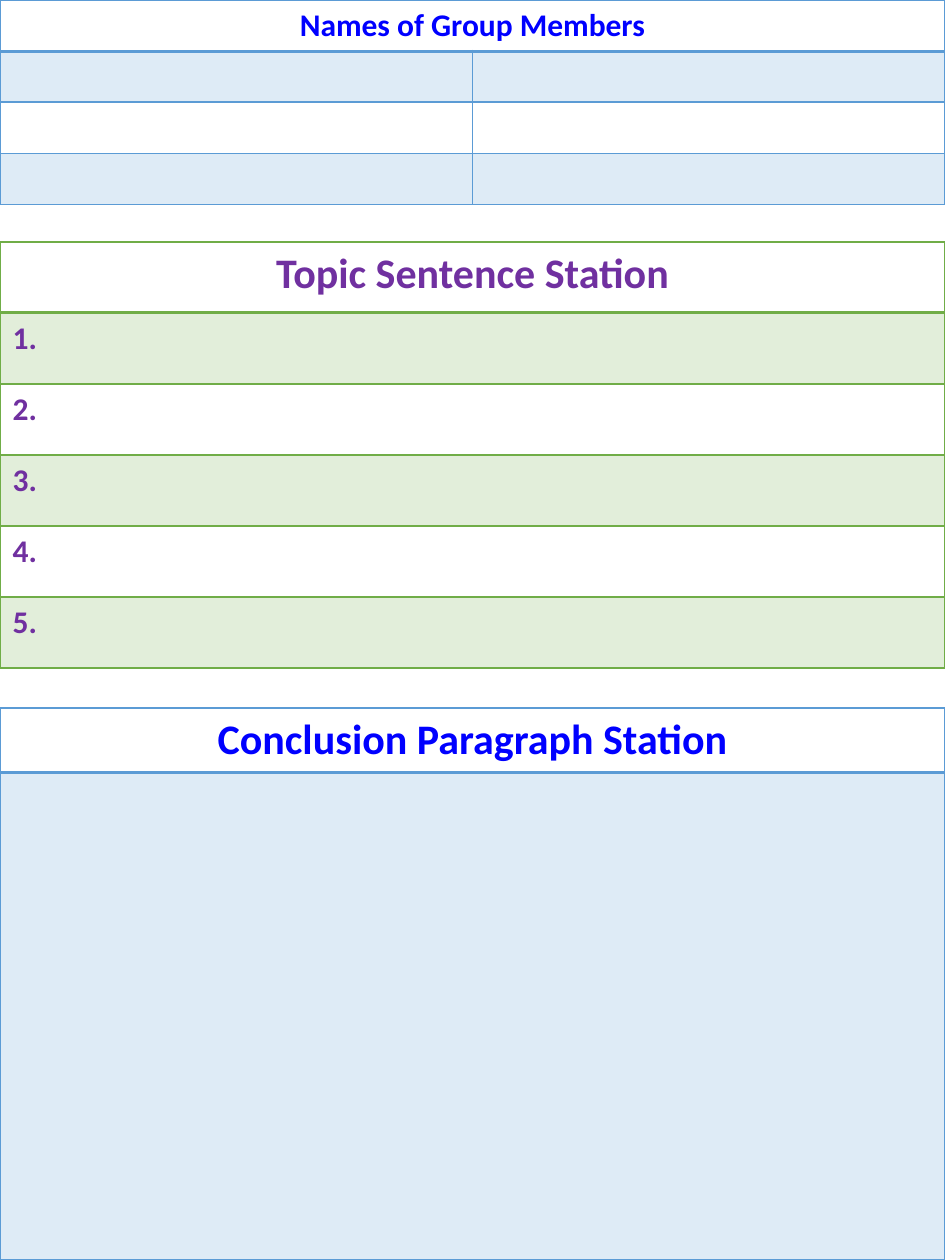
import pptx
import pptx.util
import pptx.dml.color
import pptx.enum.text
import pptx.oxml
import pptx.oxml.ns

WIDE, HIGH = 945, 1260
BLUE, GREEN = "5B9BD5", "70AD47"
INK, PLUM = "0000FF", "7030A0"

TABLES = [
    dict(title="Names of Group Members", size=18, ink=INK, tint=BLUE,
         top=0, rows=[51] * 4, cols=2, items=[""] * 3),
    dict(title="Topic Sentence Station", size=24, ink=PLUM, tint=GREEN,
         top=242, rows=[71] * 6, cols=1,
         items=["1.", "2.", "3.", "4.", "5."]),
    dict(title="Conclusion Paragraph Station", size=24, ink=INK, tint=BLUE,
         top=708, rows=[65, 487], cols=1, items=[""]),
]


def px(num):
    return pptx.util.Emu(num * 914400 // 126)


def color(code):
    return pptx.dml.color.RGBColor.from_string(code)


def write(cell, text, size=18, ink=PLUM, center=False):
    para = cell.text_frame.paragraphs[0]
    if center:
        para.alignment = pptx.enum.text.PP_ALIGN.CENTER
    if text:
        run = para.add_run()
        run.text = text
        font = run.font
        font.name, font.size, font.bold = "Calibri", pptx.util.Pt(size), True
        font.color.rgb = color(ink)


def border(cell, tint, top, base):
    props = cell._tc.get_or_add_tcPr()
    for side, wide in zip("LRTB", (1, 1, top, base)):
        props.append(pptx.oxml.parse_xml(
            f'<a:ln{side} {pptx.oxml.ns.nsdecls("a")} w="{wide * 12700}">'
            f'<a:solidFill><a:srgbClr val="{tint}"/></a:solidFill></a:ln{side}>'))


def shade(cell, tint):
    cell.fill.solid()
    cell.fill.fore_color.rgb = color(tint)
    node = cell._tc.tcPr.find(pptx.oxml.ns.qn("a:solidFill"))[0]
    node.append(pptx.oxml.parse_xml(
        f'<a:alpha {pptx.oxml.ns.nsdecls("a")} val="20000"/>'))


def build(slide, title, size, ink, tint, top, rows, cols, items):
    table = slide.shapes.add_table(len(rows), cols, 0, px(top),
                                   px(WIDE), px(sum(rows))).table
    table.first_row = table.horz_banding = False
    for row, high in zip(table.rows, rows):
        row.height = px(high)
    for num in range(len(rows)):
        for col in range(cols):
            cell = table.cell(num, col)
            border(cell, tint, 2 if num == 1 else 1, 2 if num == 0 else 1)
            if num % 2:
                shade(cell, tint)
            else:
                cell.fill.background()
    if cols > 1:
        table.cell(0, 0).merge(table.cell(0, cols - 1))
    write(table.cell(0, 0), title, size=size, ink=ink, center=True)
    for num, text in enumerate(items, 1):
        write(table.cell(num, 0), text)


def main():
    deck = pptx.Presentation()
    deck.slide_width, deck.slide_height = px(WIDE), px(HIGH)
    slide = deck.slides.add_slide(deck.slide_layouts[6])
    for table in TABLES:
        build(slide, **table)
    deck.save("out.pptx")


if __name__ == "__main__":
    main()
